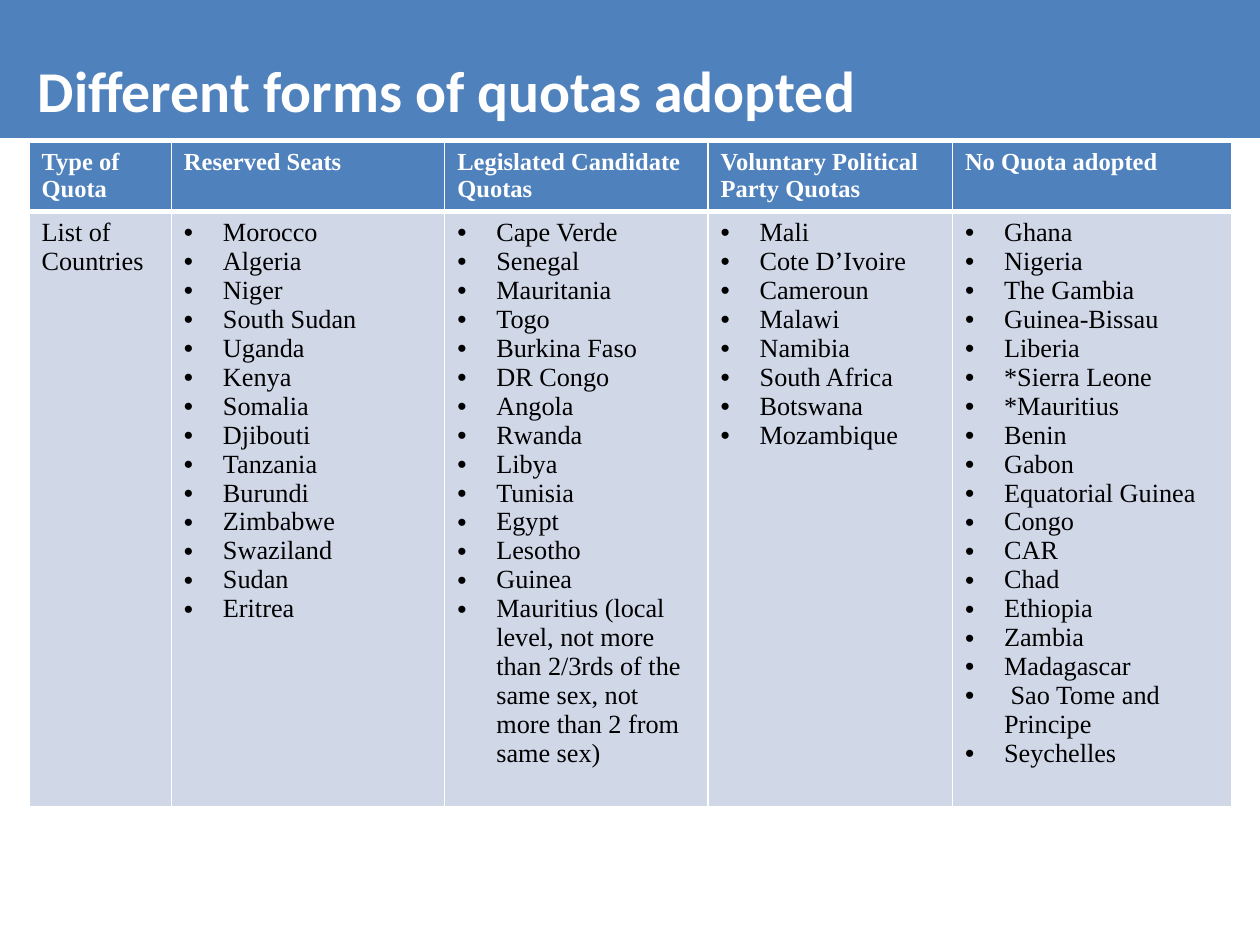
"""Build a slide with a table of gender quota types by African country."""
from dataclasses import dataclass

import pptx
import pptx.dml.color
import pptx.enum.shapes
import pptx.enum.text
import pptx.oxml.ns
import pptx.util
from lxml import etree

Inches = pptx.util.Inches
Pt = pptx.util.Pt
RGBColor = pptx.dml.color.RGBColor
qn = pptx.oxml.ns.qn

BLUE = RGBColor(0x4F, 0x81, 0xBD)
PALE = RGBColor(0xD0, 0xD8, 0xE8)
WHITE = RGBColor(0xFF, 0xFF, 0xFF)
BLACK = RGBColor(0, 0, 0)
SERIF = "Times New Roman"
INDENT = Inches(0.31)


@dataclass(frozen=True)
class QuotaColumn:
    heading: str
    width: float
    entries: tuple[str, ...]
    bulleted: bool = True


@dataclass(frozen=True)
class RowStyle:
    size: int
    bold: bool
    color: RGBColor
    fill: RGBColor
    top: int
    bottom: int


HEADER = RowStyle(14, True, WHITE, BLUE, 1, 3)
BODY = RowStyle(15, False, BLACK, PALE, 3, 1)

COLUMNS = (
    QuotaColumn("Type of Quota", 1.13, ("List of Countries",), False),
    QuotaColumn("Reserved Seats", 2.17, (
        "Morocco", "Algeria", "Niger", "South Sudan", "Uganda", "Kenya",
        "Somalia", "Djibouti", "Tanzania", "Burundi", "Zimbabwe",
        "Swaziland", "Sudan", "Eritrea")),
    QuotaColumn("Legislated Candidate Quotas", 2.09, (
        "Cape Verde", "Senegal", "Mauritania", "Togo", "Burkina Faso",
        "DR Congo", "Angola", "Rwanda", "Libya", "Tunisia", "Egypt",
        "Lesotho", "Guinea",
        "Mauritius (local level, not more than 2/3rds of the same sex, "
        "not more than 2 from same sex)")),
    QuotaColumn("Voluntary Political Party Quotas", 1.94, (
        "Mali", "Cote D’Ivoire", "Cameroun", "Malawi", "Namibia",
        "South Africa", "Botswana", "Mozambique")),
    QuotaColumn("No Quota adopted", 2.22, (
        "Ghana", "Nigeria", "The Gambia", "Guinea-Bissau", "Liberia",
        "*Sierra Leone", "*Mauritius", "Benin", "Gabon",
        "Equatorial Guinea", "Congo", "CAR", "Chad", "Ethiopia", "Zambia",
        "Madagascar", " Sao Tome and Principe", "Seychelles")),
)


def set_font(p, name: str, size: int, bold: bool, color: RGBColor) -> None:
    for r in p.runs:
        r.font.name = name
        r.font.size = Pt(size)
        r.font.bold = bold
        r.font.color.rgb = color


def add_bullet(p) -> None:
    pPr = p._p.get_or_add_pPr()
    pPr.set("marL", str(INDENT))
    pPr.set("indent", str(-INDENT))
    etree.SubElement(pPr, qn("a:buFont"), typeface="Arial")
    etree.SubElement(pPr, qn("a:buChar"), char="•")


def set_borders(cell, top: int, bottom: int) -> None:
    tcPr = cell._tc.get_or_add_tcPr()
    for side, width in (("L", 1), ("R", 1), ("T", top), ("B", bottom)):
        ln = etree.SubElement(tcPr, qn(f"a:ln{side}"), w=str(Pt(width)))
        fill = etree.SubElement(ln, qn("a:solidFill"))
        etree.SubElement(fill, qn("a:srgbClr"), val=str(WHITE))


def fill_cell(cell, lines: tuple[str, ...], style: RowStyle,
              bulleted: bool = False) -> None:
    set_borders(cell, style.top, style.bottom)
    cell.fill.solid()
    cell.fill.fore_color.rgb = style.fill
    tf = cell.text_frame
    tf.text = "\n".join(lines)
    for p in tf.paragraphs:
        if bulleted:
            add_bullet(p)
        set_font(p, SERIF, style.size, style.bold, style.color)


def add_quota_table(s) -> None:
    width = sum(column.width for column in COLUMNS)
    table = s.shapes.add_table(2, len(COLUMNS), Inches(0.23), Inches(1.13),
                               Inches(width), Inches(5.27)).table
    table.rows[0].height = Inches(0.55)
    table.rows[1].height = Inches(4.72)
    for i, column in enumerate(COLUMNS):
        table.columns[i].width = Inches(column.width)
        fill_cell(table.cell(0, i), (column.heading,), HEADER)
        fill_cell(table.cell(1, i), column.entries, BODY, column.bulleted)


def add_title_band(s, text: str) -> None:
    sp = s.shapes.add_shape(pptx.enum.shapes.MSO_SHAPE.RECTANGLE,
                            0, 0, Inches(10), Inches(1.08))
    sp.shadow.inherit = False
    sp.fill.solid()
    sp.fill.fore_color.rgb = BLUE
    sp.line.color.rgb = BLUE
    sp.line.width = Pt(2)
    tf = sp.text_frame
    tf.word_wrap = True
    tf.vertical_anchor = pptx.enum.text.MSO_ANCHOR.BOTTOM
    tf.margin_left = Inches(0.3)
    tf.margin_right = tf.margin_bottom = Inches(0.1)
    tf.margin_top = Inches(0.05)
    tf.text = text
    p = tf.paragraphs[0]
    p.alignment = pptx.enum.text.PP_ALIGN.LEFT
    p.line_spacing = 0.8
    set_font(p, "Calibri", 33, True, WHITE)


def main() -> None:
    prs = pptx.Presentation()
    prs.slide_width = Inches(10)
    prs.slide_height = Inches(7.5)
    s = prs.slides.add_slide(prs.slide_layouts[6])
    add_quota_table(s)
    add_title_band(s, "Different forms of quotas adopted")
    prs.save("out.pptx")


if __name__ == "__main__":
    main()
